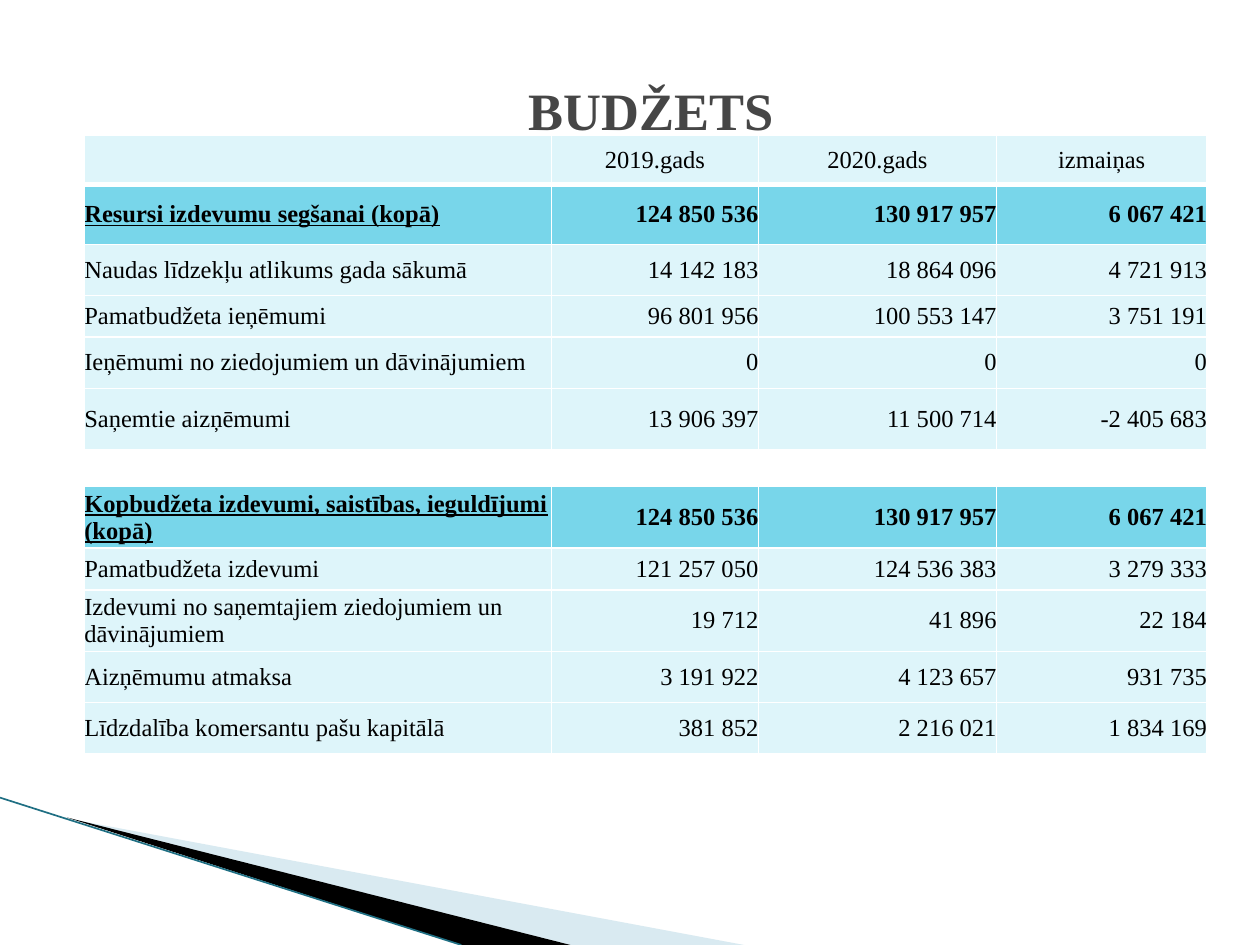
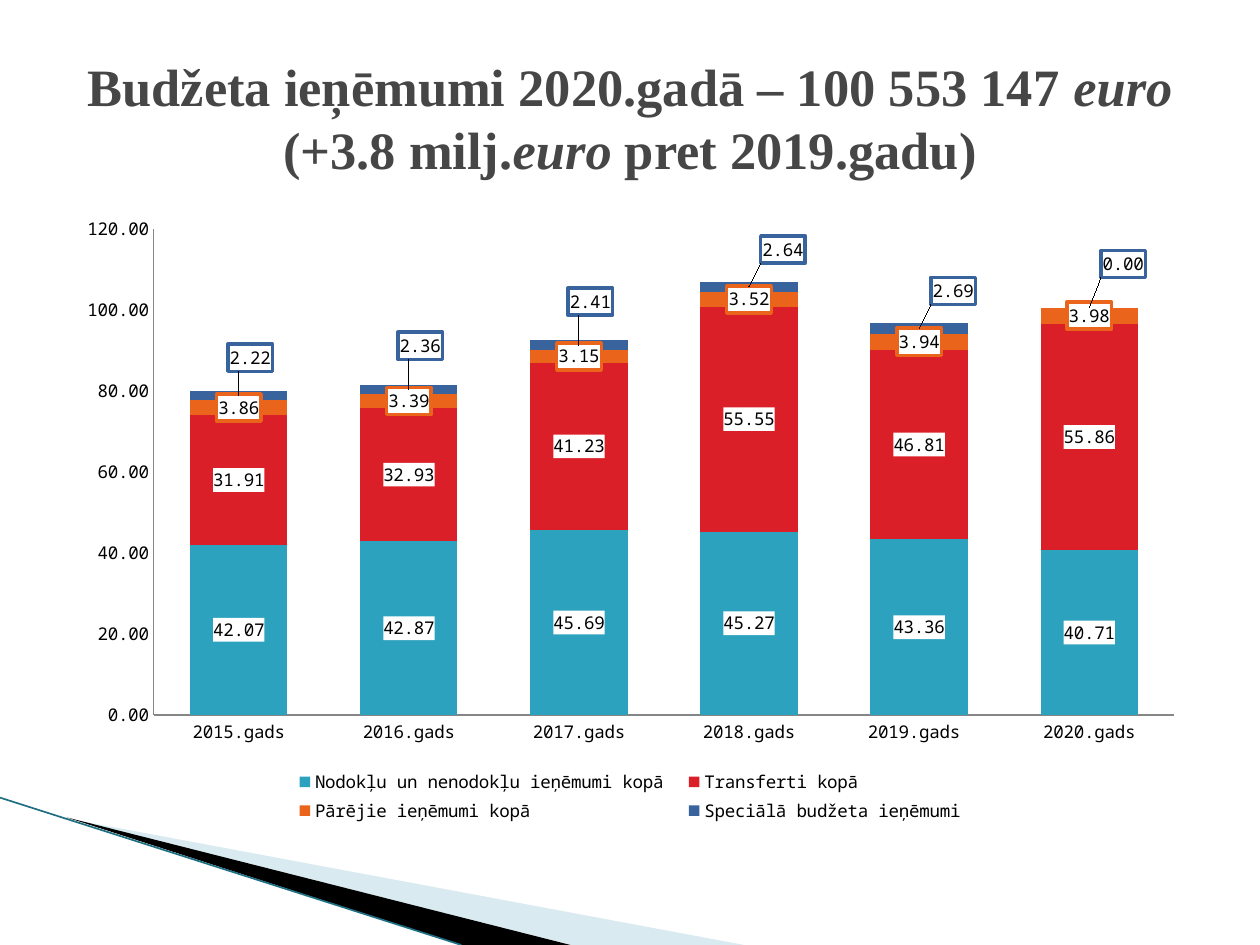
from pptx import Presentation
from pptx.chart.data import CategoryChartData
from pptx.dml.color import RGBColor
from pptx.enum.chart import (XL_CHART_TYPE, XL_LABEL_POSITION,
                             XL_LEGEND_POSITION, XL_TICK_MARK)
from pptx.enum.text import MSO_ANCHOR, PP_ALIGN
from pptx.oxml import parse_xml
from pptx.oxml.ns import nsdecls, qn
from pptx.util import Cm, Pt
from lxml.etree import SubElement

COLORS = {
    "text": "000000", "title": "464646", "white": "FFFFFF",
    "pale": "DEF5FA", "total": "78D6EA", "axis": "868686",
    "wedge": "A0CBDC", "edge": "1F6F83",
    "tax": "2DA2BF", "grant": "DA1F28", "other": "EB641B", "special": "39639D",
}
SERIF, MONO = "Times New Roman", "Noto Sans Mono"

# Budget table: None marks the gap row; "total" rows are bold
HEADS = ["", "2019.gads", "2020.gads", "izmaiņas"]
ROWS = [
    HEADS,
    ["Resursi izdevumu segšanai (kopā)", "124 850 536", "130 917 957", "6 067 421"],
    ["Naudas līdzekļu atlikums gada sākumā", "14 142 183", "18 864 096", "4 721 913"],
    ["Pamatbudžeta ieņēmumi", "96 801 956", "100 553 147", "3 751 191"],
    ["Ieņēmumi no ziedojumiem un dāvinājumiem", "0", "0", "0"],
    ["Saņemtie aizņēmumi", "13 906 397", "11 500 714", "-2 405 683"],
    None,
    ["Kopbudžeta izdevumi, saistības, ieguldījumi (kopā)",
     "124 850 536", "130 917 957", "6 067 421"],
    ["Pamatbudžeta izdevumi", "121 257 050", "124 536 383", "3 279 333"],
    ["Izdevumi no saņemtajiem ziedojumiem un dāvinājumiem",
     "19 712", "41 896", "22 184"],
    ["Aizņēmumu atmaksa", "3 191 922", "4 123 657", "931 735"],
    ["Līdzdalība komersantu pašu kapitālā", "381 852", "2 216 021", "1 834 169"],
]
TOTALS = (1, 7)
WIDTHS = [9.42, 4.17, 4.8, 4.24]
HEIGHTS = [1, 1.21, 1.03, 0.83, 1.04, 1.24, 0.74, 1.24, 0.84, 1.24, 1.03, 1.03]

# Income chart: name, colour, values, boxed labels
YEARS = ["2015.gads", "2016.gads", "2017.gads", "2018.gads", "2019.gads ", "2020.gads"]
SERIES = [
    ("Nodokļu un nenodokļu ieņēmumi kopā ", "tax",
     [42.07, 42.87, 45.69, 45.27, 43.36, 40.71], False),
    ("Transferti kopā", "grant", [31.91, 32.93, 41.23, 55.55, 46.81, 55.86], False),
    ("Pārējie ieņēmumi kopā", "other", [3.86, 3.39, 3.15, 3.52, 3.94, 3.98], True),
    ("Speciālā budžeta ieņēmumi", "special", [2.22, 2.36, 2.41, 2.64, 2.69, 0], True),
]
SHIFTS = [(0.01, -0.06), (0.01, -0.07), (0.01, -0.07),
          (0.03, -0.06), (0.03, -0.06), (0.03, -0.07)]


def color(key):
    return RGBColor.from_string(COLORS[key])


def style(font, face, size, key="text", bold=False):
    font.name, font.size, font.bold = face, Pt(size), bold
    font.color.rgb = color(key)


# Shared slide parts
def add_wedge(slide, points, key, alpha=None):
    (x, y), *rest = [(Cm(a), Cm(b)) for a, b in points]
    pen = slide.shapes.build_freeform(x, y)
    pen.add_line_segments(rest)
    shape = pen.convert_to_shape()
    shape.shadow.inherit = False
    shape.fill.solid()
    shape.fill.fore_color.rgb = color(key)
    shape.line.fill.background()
    if alpha:
        tint = shape.fill._xPr.find(f".//{qn('a:srgbClr')}")
        SubElement(tint, qn("a:alpha"), val=str(alpha * 1000))


def add_corner(slide):
    add_wedge(slide, [(1.4, 16.51), (15, 19.05), (11.5, 19.05)], "wedge", 40)
    add_wedge(slide, [(1.35, 16.48), (11.5, 19.05), (9.3, 19.05)], "text")
    line = slide.shapes.add_connector(1, Cm(0), Cm(16.08), Cm(9.3), Cm(19.05))
    line.line.color.rgb = color("edge")
    line.line.width = Pt(0.95)
    SubElement(line._element.spPr, qn("a:effectLst"))


def add_title(slide, box, lines):
    """Each line is a list of (text, italic) runs."""
    title = slide.shapes.title
    title.left, title.top, title.width, title.height = map(Cm, box)
    title.text_frame.vertical_anchor = MSO_ANCHOR.MIDDLE
    para = title.text_frame.paragraphs[0]
    para.alignment = PP_ALIGN.CENTER
    style(para.font, SERIF, 30, "title", True)
    for i, line in enumerate(lines):
        if i:
            para.add_line_break()
        for text, slant in line:
            run = para.add_run()
            run.text = text
            if slant:
                run.font.italic = True


def new_slide(deck, box, lines):
    slide = deck.slides.add_slide(deck.slide_layouts[5])
    add_corner(slide)
    add_title(slide, box, lines)
    return slide


# Table
def set_edges(cell, base):
    props = cell._tc.get_or_add_tcPr()
    for side in "LRTB":
        width = Pt(3 if side == base else 1)
        props.append(parse_xml(
            f'<a:ln{side} {nsdecls("a")} w="{width}"><a:solidFill>'
            f'<a:srgbClr val="{COLORS["white"]}"/></a:solidFill></a:ln{side}>'))


def fill_cell(cell, text, row, col):
    cell.margin_left = cell.margin_right = cell.margin_top = cell.margin_bottom = 0
    cell.vertical_anchor = MSO_ANCHOR.MIDDLE
    set_edges(cell, "B" if row == 0 else "T" if row == 1 else None)
    para = cell.text_frame.paragraphs[0]
    if text:
        total = row in TOTALS
        para.text = text
        style(para.font, SERIF, 14, bold=total)
        para.font.underline = total and col == 0
        para.alignment = (PP_ALIGN.CENTER if row == 0 else
                          PP_ALIGN.RIGHT if col else PP_ALIGN.LEFT)
    else:
        para._p.get_or_add_endParaRPr().set("sz", "1400")


def add_budget(slide):
    frame = slide.shapes.add_table(len(ROWS), len(HEADS), Cm(1.7), Cm(2.72),
                                   Cm(sum(WIDTHS)), Cm(sum(HEIGHTS)))
    table = frame.table
    table.first_row = table.horz_banding = False
    for column, width in zip(table.columns, WIDTHS):
        column.width = Cm(width)
    for r, (texts, height) in enumerate(zip(ROWS, HEIGHTS)):
        table.rows[r].height = Cm(height)
        for c, text in enumerate(texts or [""] * len(HEADS)):
            cell = table.cell(r, c)
            fill_cell(cell, text, r, c)
            if texts:
                cell.fill.solid()
                cell.fill.fore_color.rgb = color("total" if r in TOTALS else "pale")
            else:
                cell.fill.background()


# Chart
def place(**parts):
    """Manual layout; inner plot area when a target is wanted."""
    tags = "".join(f'<c:{k} val="{v}"/>' for k, v in parts.items())
    return parse_xml(f'<c:layout {nsdecls("c")}><c:manualLayout>{tags}'
                     '</c:manualLayout></c:layout>')


def clear(node, tag):
    for old in node.findall(qn(tag)):
        node.remove(old)


def label_box(key, boxed):
    line = (f'<a:ln w="{Pt(2)}"><a:solidFill><a:srgbClr val="{COLORS[key]}"/>'
            '</a:solidFill></a:ln>') if boxed else '<a:ln><a:noFill/></a:ln>'
    return parse_xml(f'<c:spPr {nsdecls("c", "a")}><a:solidFill>'
                     f'<a:srgbClr val="{COLORS["white"]}"/></a:solidFill>{line}</c:spPr>')


def add_labels(series, key, boxed):
    labels = series.data_labels
    labels.show_value = True
    labels.number_format, labels.number_format_is_linked = "0.00", False
    labels.position = XL_LABEL_POSITION.CENTER
    style(labels.font, MONO, 10)
    node = labels._element
    clear(node, "c:spPr")
    node.find(qn("c:numFmt")).addnext(label_box(key, boxed))
    # No leader lines to moved labels
    node.append(parse_xml(
        f'<c:extLst {nsdecls("c")}><c:ext uri="{{CE6537A1-D6FC-4f65-9D91-7224C49458BB}}" '
        'xmlns:c15="http://schemas.microsoft.com/office/drawing/2012/chart">'
        '<c15:showLeaderLines val="0"/></c:ext></c:extLst>'))


def shift_label(point, key, x, y):
    label = point.data_label
    style(label.font, MONO, 10)
    node = label._get_or_add_dLbl()
    clear(node, "c:spPr")
    form = parse_xml(f'<c:numFmt {nsdecls("c")} formatCode="0.00" sourceLinked="0"/>')
    for part in (label_box(key, True), form, place(x=x, y=y)):
        node.find(qn("c:idx")).addnext(part)


def set_axis(axis):
    axis.has_major_gridlines = False
    axis.major_tick_mark = axis.minor_tick_mark = XL_TICK_MARK.NONE
    axis.format.line.color.rgb = color("axis")
    style(axis.tick_labels.font, MONO, 10)


def add_income(slide):
    data = CategoryChartData(number_format="0.00")
    data.categories = YEARS
    for name, _, values, _ in SERIES:
        data.add_series(name, values)
    chart = slide.shapes.add_chart(XL_CHART_TYPE.COLUMN_STACKED, Cm(1.27), Cm(4.11),
                                   Cm(22.86), Cm(12.57), data).chart
    chart.has_title = False
    style(chart.font, MONO, 10)
    set_axis(chart.category_axis)
    axis = chart.value_axis
    set_axis(axis)
    axis.minimum_scale, axis.maximum_scale, axis.major_unit = 0, 120, 20
    axis.tick_labels.number_format = "0.00"
    axis.tick_labels.number_format_is_linked = False

    plot = chart.plots[0]
    plot.gap_width, plot.overlap, plot.vary_by_categories = 75, 100, False
    for series, (_, key, _, boxed) in zip(plot.series, SERIES):
        series.format.fill.solid()
        series.format.fill.fore_color.rgb = color(key)
        add_labels(series, key, boxed)
    for i, (x, y) in enumerate(SHIFTS):
        shift_label(plot.series[3].points[i], "special", x, y)

    # Plot area and legend places
    area = chart._chartSpace.chart.plotArea
    clear(area, "c:layout")
    area.insert(0, place(layoutTarget="inner", xMode="edge", yMode="edge",
                         x=0.08, y=0.04, w=0.9, h=0.78))
    chart.has_legend = True
    legend = chart.legend
    legend.position = XL_LEGEND_POSITION.BOTTOM
    legend.include_in_layout = False
    style(legend.font, MONO, 10)
    clear(legend._element, "c:layout")
    legend._element.find(qn("c:legendPos")).addnext(
        place(xMode="edge", yMode="edge", x=0.2, y=0.9, w=0.6, h=0.1))


def main():
    deck = Presentation()
    deck.slide_width, deck.slide_height = Cm(25.4), Cm(19.05)
    add_budget(new_slide(deck, (1.7, 1.12, 22.86, 2.16), [[("BUDŽETS", False)]]))
    add_income(new_slide(deck, (1.27, 0.76, 22.86, 3.18), [
        [("Budžeta ieņēmumi 2020.gadā – 100 553 147 ", False), ("euro", True)],
        [("(+3.8 milj.", False), ("euro", True), (" pret 2019.gadu)", False)],
    ]))
    deck.save("out.pptx")


if __name__ == "__main__":
    main()
